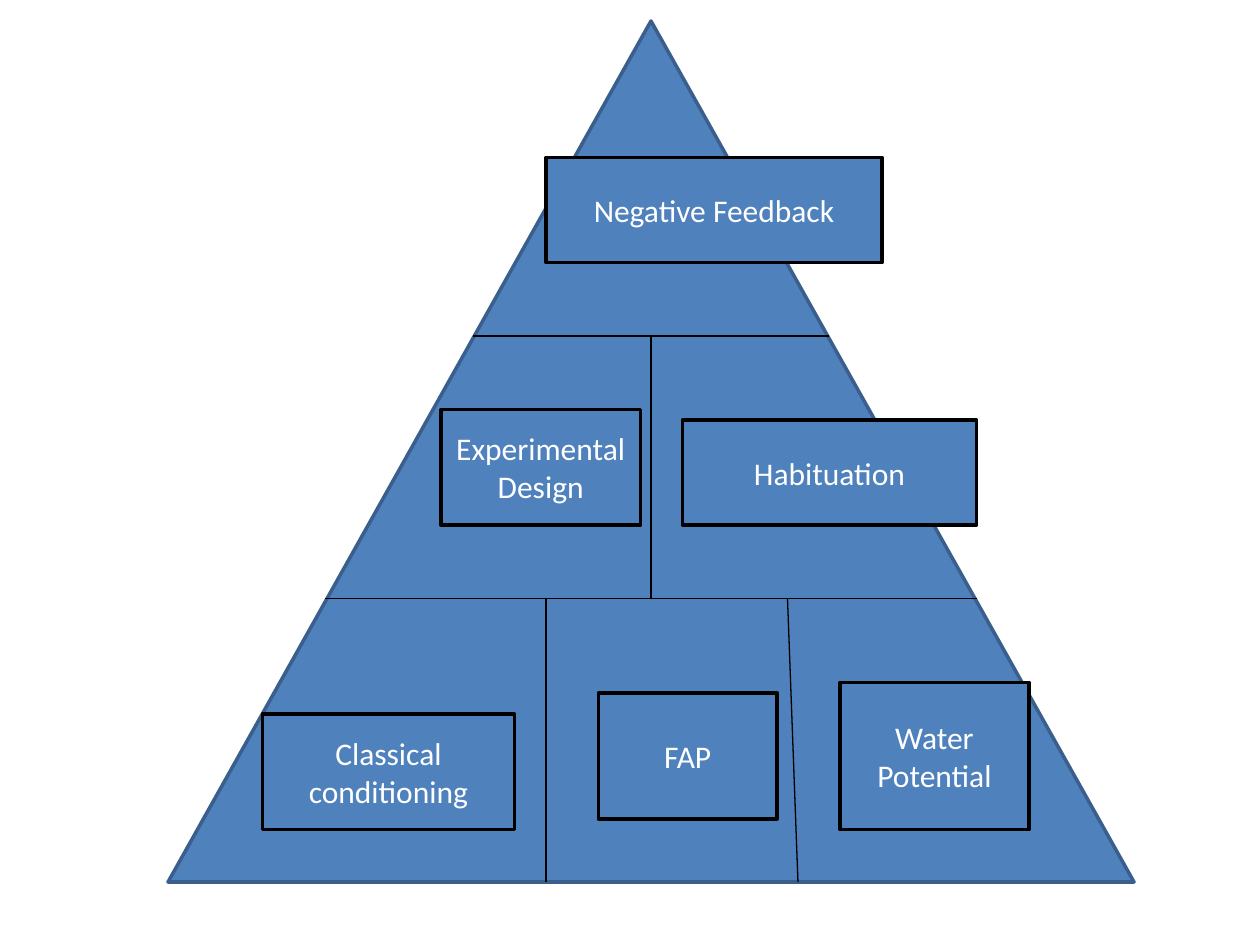
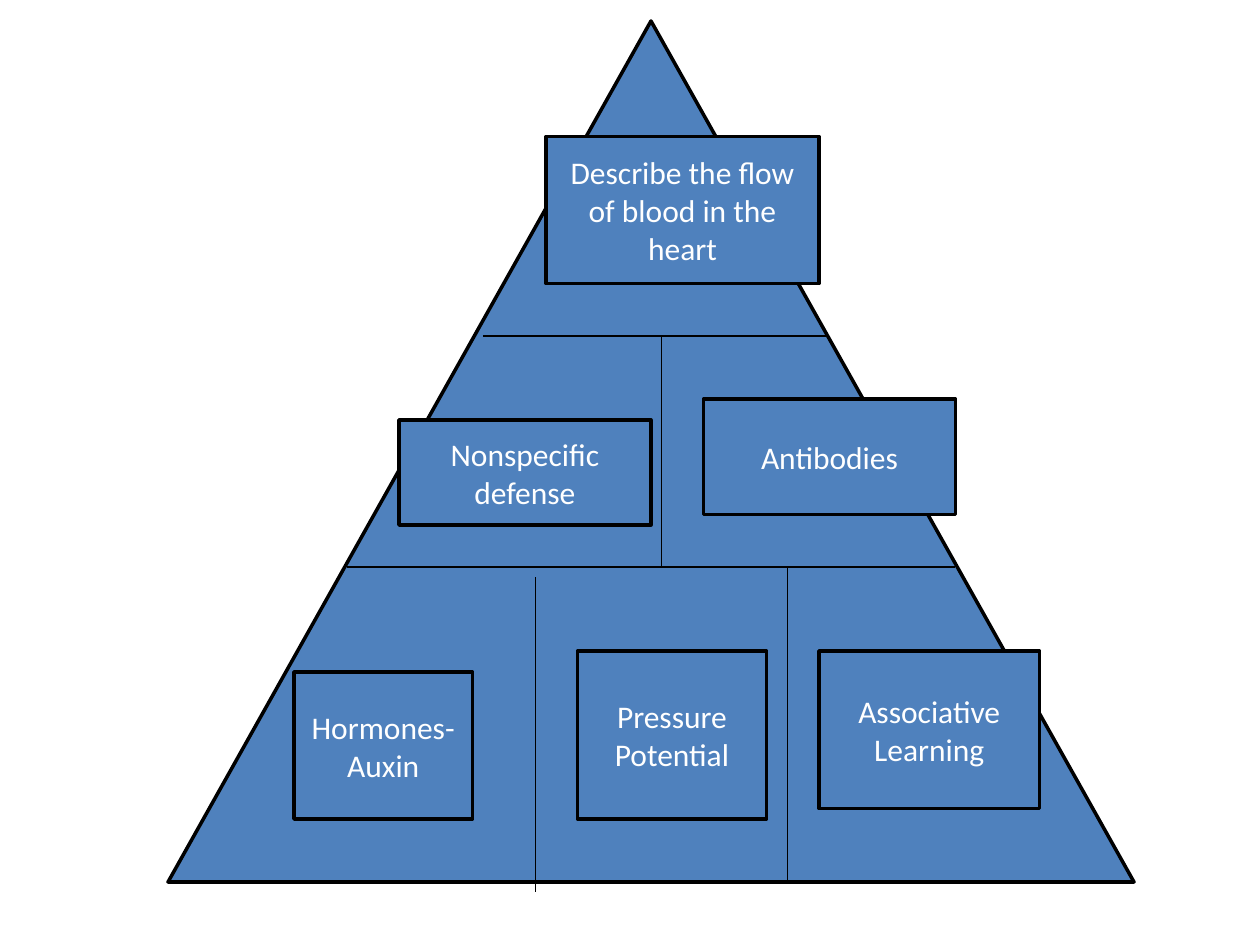
from lxml import etree
from pptx import Presentation
from pptx import util as u
from pptx.dml.color import RGBColor
from pptx.enum import shapes, text
from pptx.oxml.ns import qn

PX = u.Inches(1) // 96
WIDTH, HEIGHT = 960, 720
BLANK_LAYOUT = 6

BLUE, DARK_BLUE = "4F81BD", "3A5F8C"
BLACK, WHITE = "000000", "FFFFFF"

APEX_BOTTOM = 256  # divider under the top tier, the same on both slides
BASE = 672

# Dividers are (x1, y1, x2, y2); topics are (label, left, top, width, height).
PYRAMIDS = [
    {
        "outline": DARK_BLUE,
        "dividers": [
            (248, 456, 744, 456),
            (360, APEX_BOTTOM, 632, APEX_BOTTOM),
            (496, APEX_BOTTOM, 496, 456),
            (416, 456, 416, BASE),
            (600, 456, 608, BASE),
        ],
        "topics": [
            ("Experimental Design", 336, 312, 152, 88),
            ("Negative Feedback", 416, 120, 256, 80),
            ("Habituation", 520, 320, 224, 80),
            ("Classical conditioning", 200, 544, 192, 88),
            ("FAP", 456, 528, 136, 96),
            ("Water Potential", 640, 520, 144, 112),
        ],
    },
    {
        "outline": BLACK,
        "dividers": [
            (368, APEX_BOTTOM, 632, APEX_BOTTOM),
            (264, 432, 728, 432),
            (408, 440, 408, 680),
            (600, 432, 600, BASE),
            (504, APEX_BOTTOM, 504, 432),
        ],
        "topics": [
            ("Describe the flow of blood in the heart", 416, 104, 208, 112),
            ("Nonspecific defense", 304, 320, 192, 80),
            ("Antibodies", 536, 304, 192, 88),
            ("Hormones- Auxin", 224, 512, 136, 112),
            ("Pressure Potential", 440, 496, 144, 128),
            ("Associative Learning", 624, 496, 168, 120),
        ],
    },
]


def color(hex_string):
    return RGBColor.from_string(hex_string)


def px(*lengths):
    """Turn pixel lengths into EMU."""
    return [length * PX for length in lengths]


class PyramidDeck:
    font_name = "Calibri"
    font_size = u.Pt(18)
    outline_width = u.Pt(2)
    divider_width = u.Pt(0.75)

    def __init__(self):
        self.presentation = Presentation()
        self.presentation.slide_width, self.presentation.slide_height = px(WIDTH, HEIGHT)
        self.slide = None

    def add_slide(self):
        layout = self.presentation.slide_layouts[BLANK_LAYOUT]
        self.slide = self.presentation.slides.add_slide(layout)

    def add_filled_shape(self, kind, box, outline):
        shape = self.slide.shapes.add_shape(kind, *px(*box))
        shape.shadow.inherit = False
        shape.fill.solid()
        shape.fill.fore_color.rgb = color(BLUE)
        shape.line.color.rgb = color(outline)
        shape.line.width = self.outline_width
        return shape

    def add_triangle(self, outline):
        box = (128, 16, 736, BASE - 16)
        self.add_filled_shape(shapes.MSO_SHAPE.ISOSCELES_TRIANGLE, box, outline)

    def add_divider(self, *ends):
        connector = self.slide.shapes.add_connector(
            shapes.MSO_CONNECTOR.STRAIGHT, *px(*ends))
        connector.line.color.rgb = color(BLACK)
        connector.line.width = self.divider_width
        etree.SubElement(connector._element.spPr, qn("a:effectLst"))

    def add_topic(self, label, *box):
        shape = self.add_filled_shape(shapes.MSO_SHAPE.RECTANGLE, box, BLACK)
        frame = shape.text_frame
        frame.word_wrap = True
        frame.vertical_anchor = text.MSO_ANCHOR.MIDDLE
        paragraph = frame.paragraphs[0]
        paragraph.alignment = text.PP_ALIGN.CENTER
        run = paragraph.add_run()
        run.text = label
        run.font.name = self.font_name
        run.font.size = self.font_size
        run.font.color.rgb = color(WHITE)


def main():
    deck = PyramidDeck()
    for pyramid in PYRAMIDS:
        deck.add_slide()
        deck.add_triangle(pyramid["outline"])
        for divider in pyramid["dividers"]:
            deck.add_divider(*divider)
        for topic in pyramid["topics"]:
            deck.add_topic(*topic)
    deck.presentation.save("out.pptx")


if __name__ == "__main__":
    main()
